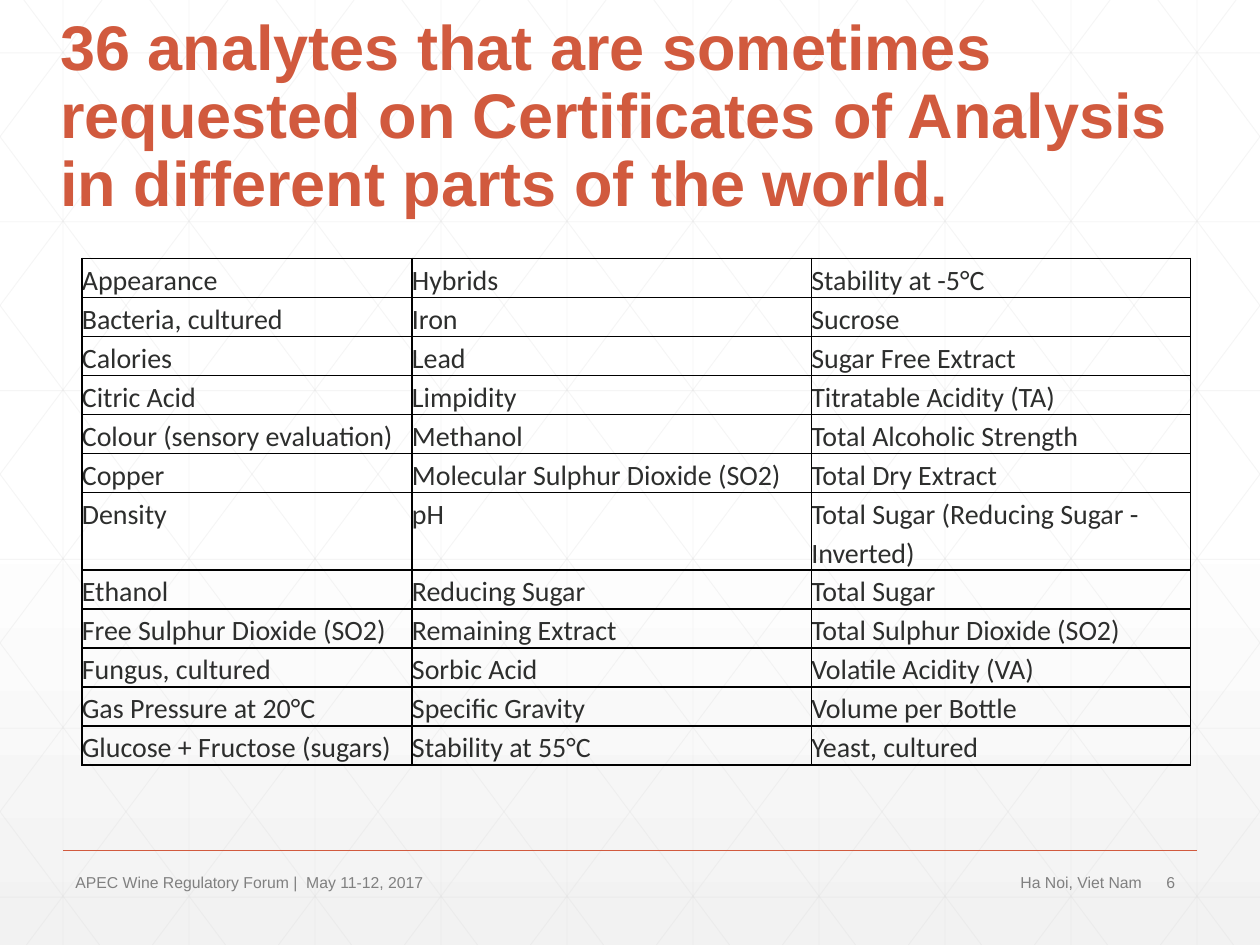
import pptx
import pptx.dml.color
import pptx.enum.shapes
import pptx.enum.text
import pptx.oxml.ns
import pptx.util
from lxml import etree

WIDTH, HEIGHT = 10, 7.5
ACCENT, GRID, MUTED, INK = "D15A3E", "D9D9D9", "808080", "2D2E2D"
DIAGONAL_RUN = 5.6
COLUMN_WIDTHS = (2.62, 3.17, 3.01)
ROW_HEIGHT = 0.31
ANALYTES = [
    ("Appearance", "Hybrids", "Stability at -5°C"),
    ("Bacteria, cultured", "Iron", "Sucrose"),
    ("Calories", "Lead", "Sugar Free Extract"),
    ("Citric Acid", "Limpidity", "Titratable Acidity (TA)"),
    ("Colour (sensory evaluation)", "Methanol", "Total Alcoholic Strength"),
    ("Copper", "Molecular Sulphur Dioxide (SO2)", "Total Dry Extract"),
    ("Density", "pH", "Total Sugar (Reducing Sugar - Inverted)"),
    ("Ethanol", "Reducing Sugar", "Total Sugar"),
    ("Free Sulphur Dioxide (SO2)", "Remaining Extract", "Total Sulphur Dioxide (SO2)"),
    ("Fungus, cultured", "Sorbic Acid", "Volatile Acidity (VA)"),
    ("Gas Pressure at 20°C", "Specific Gravity", "Volume per Bottle"),
    ("Glucose + Fructose (sugars)", "Stability at 55°C", "Yeast, cultured"),
]


def color(hex_string):
    return pptx.dml.color.RGBColor.from_string(hex_string)


def inches(*lengths):
    return [pptx.util.Inches(length) for length in lengths]


def add_child(parent, tag, **attributes):
    return etree.SubElement(parent, pptx.oxml.ns.qn(tag), attributes)


def paint_background(slide):
    fill = slide.background.fill
    fill.gradient()
    fill.gradient_angle = 270
    stops = next(slide.element.iter(pptx.oxml.ns.qn("a:gsLst")))
    for stop in list(stops):
        stops.remove(stop)
    for percent, shade in ((0, "FFFFFF"), (53, "FFFFFF"), (100, "F2F2F2")):
        stop = add_child(stops, "a:gs", pos=str(percent * 1000))
        add_child(stop, "a:srgbClr", val=shade)


def add_line(slide, start, end, hex_string, width, opacity=100):
    line = slide.shapes.add_connector(
        pptx.enum.shapes.MSO_CONNECTOR.STRAIGHT, *inches(*start, *end))
    line.line.color.rgb = color(hex_string)
    line.line.width = pptx.util.Pt(width)
    if opacity < 100:
        shade = next(line.line._ln.iter(pptx.oxml.ns.qn("a:srgbClr")))
        add_child(shade, "a:alpha", val=str(opacity * 1000))
    add_child(line._element.spPr, "a:effectLst")


def add_lattice(slide):
    def add_grid_line(start, end):
        add_line(slide, start, end, GRID, 0.5, 25)

    for column in range(10):
        add_grid_line((column + 0.5, 0), (column + 0.5, HEIGHT))
    for row in range(6):
        y = 0.42 + 1.34 * row
        add_grid_line((0, y), (WIDTH, y))
    slope = HEIGHT / DIAGONAL_RUN
    for column in range(-5, 10):
        top = column + 0.19
        left, right = max(top, 0), min(top + DIAGONAL_RUN, WIDTH)
        upper, lower = (left - top) * slope, (right - top) * slope
        add_grid_line((left, upper), (right, lower))
        add_grid_line((WIDTH - left, upper), (WIDTH - right, lower))


def style_paragraph(paragraph, font_name, size, hex_string, bold=False):
    font = paragraph.font
    font.name, font.size, font.bold = font_name, pptx.util.Pt(size), bold
    font.color.rgb = color(hex_string)


def add_text(slide, text, box, size, hex_string, bold=False, align="LEFT", anchor="TOP"):
    frame = slide.shapes.add_textbox(*inches(*box)).text_frame
    frame.word_wrap = True
    frame.vertical_anchor = pptx.enum.text.MSO_ANCHOR[anchor]
    paragraph = frame.paragraphs[0]
    paragraph.text = text
    paragraph.alignment = pptx.enum.text.PP_ALIGN[align]
    style_paragraph(paragraph, "Arial", size, hex_string, bold)
    return paragraph


def add_borders(cell):
    properties = cell._tc.get_or_add_tcPr()
    for side in ("L", "R", "T", "B"):
        border = add_child(properties, f"a:ln{side}", w=str(pptx.util.Pt(1)))
        add_child(add_child(border, "a:solidFill"), "a:srgbClr", val="000000")


def fill_cell(cell, text):
    cell.margin_left = cell.margin_right = cell.margin_top = cell.margin_bottom = 0
    add_borders(cell)
    cell.fill.background()
    paragraph = cell.text_frame.paragraphs[0]
    paragraph.text = text
    paragraph.line_spacing = 1.15
    style_paragraph(paragraph, "Calibri", 16, INK)


def add_analyte_table(slide):
    rows = len(ANALYTES)
    table = slide.shapes.add_table(
        rows, len(COLUMN_WIDTHS),
        *inches(0.65, 2.05, sum(COLUMN_WIDTHS), rows * ROW_HEIGHT)).table
    table.first_row = table.horz_banding = False
    for column, width in zip(table.columns, COLUMN_WIDTHS):
        column.width = pptx.util.Inches(width)
    for row, names in zip(table.rows, ANALYTES):
        row.height = pptx.util.Inches(ROW_HEIGHT)
        for cell, name in zip(row.cells, names):
            fill_cell(cell, name)


def add_footer(slide):
    top, height = 6.88, 0.24
    add_line(slide, (0.5, 6.75), (9.5, 6.75), ACCENT, 1)
    for text, left, width, align in (
        ("6", 9.16, 0.34, "LEFT"),
        ("APEC Wine Regulatory Forum |  May 11-12, 2017", 0.5, 5.03, "LEFT"),
        ("Ha Noi, Viet Nam", 5.58, 3.58, "RIGHT"),
    ):
        add_text(slide, text, (left, top, width, height), 9, MUTED, align=align)


def main():
    presentation = pptx.Presentation()
    presentation.slide_width, presentation.slide_height = inches(WIDTH, HEIGHT)
    slide = presentation.slides.add_slide(presentation.slide_layouts[6])
    paint_background(slide)
    add_lattice(slide)
    title = add_text(
        slide,
        "36 analytes that are sometimes requested on Certificates of Analysis "
        "in different parts of the world.",
        (0.38, 0.55, 9.38, 1.25), 36, ACCENT, bold=True, anchor="BOTTOM")
    title.line_spacing = 0.9
    add_footer(slide)
    add_analyte_table(slide)
    presentation.save("out.pptx")


if __name__ == "__main__":
    main()
